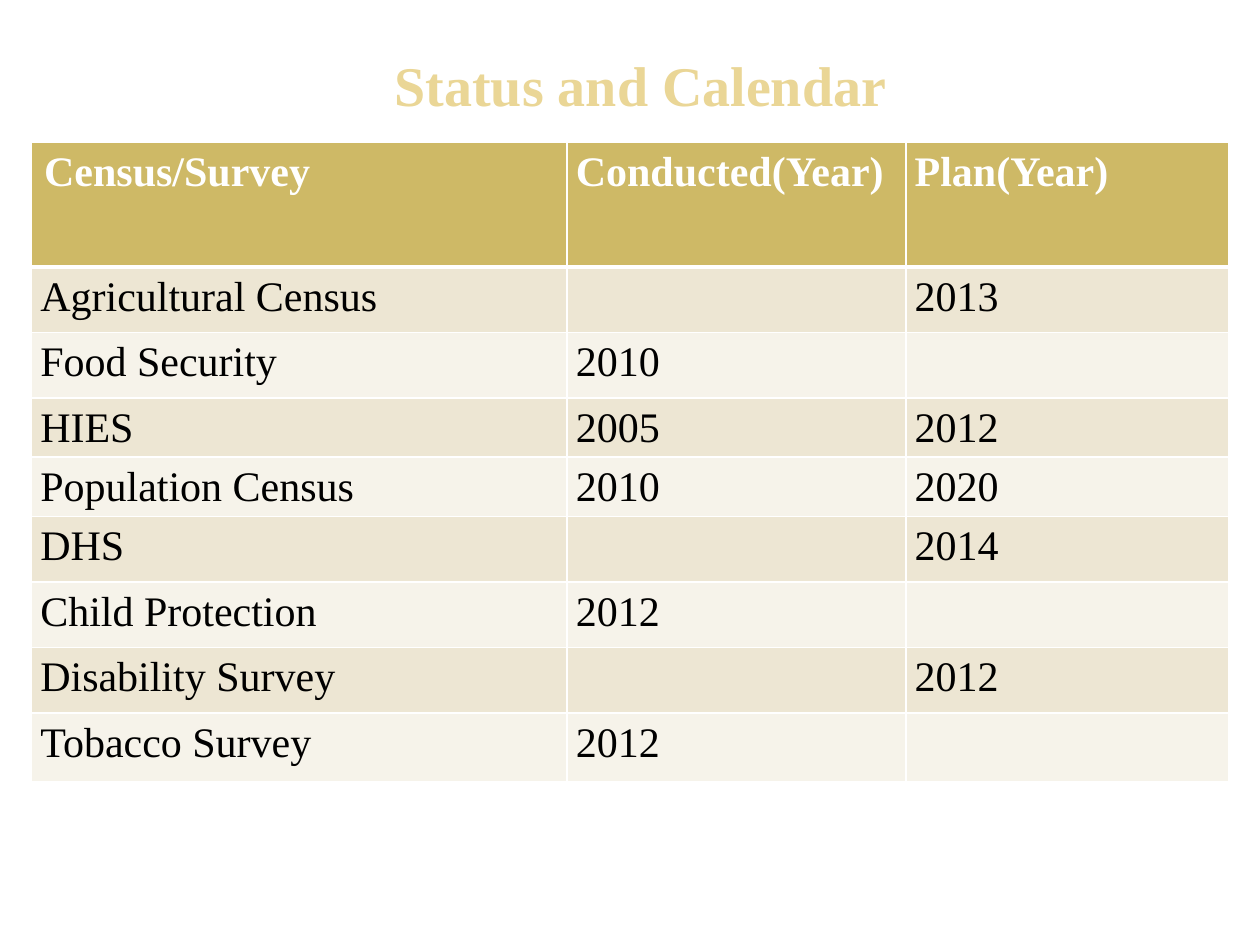
from dataclasses import dataclass

import lxml.etree
import pptx
import pptx.dml.color
import pptx.enum.text
import pptx.oxml.ns
import pptx.util

Inches = pptx.util.Inches
Pt = pptx.util.Pt


@dataclass(frozen=True)
class Theme:
    font: str = "Times New Roman"
    title: str = "EAD696"
    header: str = "CEB966"
    bands: tuple[str, str] = ("EDE6D3", "F6F3EA")
    light: str = "FFFFFF"
    dark: str = "000000"
    title_size: int = 32
    body_size: int = 24
    thin: int = 1
    thick: int = 3


@dataclass(frozen=True)
class Survey:
    name: str
    conducted: str
    plan: str
    height: float = 0.52


THEME = Theme()
HEADER = Survey("Census/Survey", "Conducted(Year)", "Plan(Year)", 0.99)
SURVEYS = [
    Survey("Agricultural Census", "", "2013"),
    Survey("Food Security", "2010", ""),
    Survey("HIES", "2005", "2012", 0.47),
    Survey("Population Census", "2010", "2020", 0.47),
    Survey("DHS", "", "2014"),
    Survey("Child Protection", "2012", ""),
    Survey("Disability Survey", "", "2012"),
    Survey("Tobacco Survey", "2012", "", 0.55),
]
COLUMN_WIDTHS = (4.25, 2.69, 2.56)


def rgb(color: str) -> pptx.dml.color.RGBColor:
    return pptx.dml.color.RGBColor.from_string(color)


def write(tf, text: str, *, size: int, color: str, bold: bool = False,
          align=None, spacing: float | None = None) -> None:
    p = tf.paragraphs[0]
    p.alignment = align
    p.line_spacing = spacing
    r = p.add_run()
    r.text = text
    r.font.name = THEME.font
    r.font.size = Pt(size)
    r.font.bold = bold
    r.font.color.rgb = rgb(color)


def set_borders(cell, *, top: int, bottom: int) -> None:
    """Border the cell in white; the sides are thin, widths are in points."""
    qn = pptx.oxml.ns.qn
    tc_pr = cell._tc.get_or_add_tcPr()
    widths = {"a:lnL": THEME.thin, "a:lnR": THEME.thin, "a:lnT": top, "a:lnB": bottom}
    for i, (tag, width) in enumerate(widths.items()):
        line = tc_pr.makeelement(qn(tag), {"w": str(Pt(width))})
        fill = lxml.etree.SubElement(line, qn("a:solidFill"))
        lxml.etree.SubElement(fill, qn("a:srgbClr"), val=THEME.light)
        tc_pr.insert(i, line)


def add_title(s, text: str) -> None:
    box = s.shapes.add_textbox(Inches(0.17), Inches(0.33), Inches(9.83), Inches(0.67))
    tf = box.text_frame
    tf.word_wrap = True
    tf.vertical_anchor = pptx.enum.text.MSO_ANCHOR.MIDDLE
    write(tf, text, size=THEME.title_size, color=THEME.title, bold=True,
          align=pptx.enum.text.PP_ALIGN.CENTER)


def fill_cell(cell, text: str, row: int, col: int) -> None:
    is_header = row == 0
    cell.fill.solid()
    cell.fill.fore_color.rgb = rgb(THEME.header if is_header else THEME.bands[(row - 1) % 2])
    set_borders(cell, top=THEME.thick if row == 1 else THEME.thin,
                bottom=THEME.thick if is_header else THEME.thin)
    if not text:
        return
    is_corner = is_header and col == 0
    if not is_corner:
        cell.margin_left = cell.margin_right = Inches(0.07)
        cell.margin_top = cell.margin_bottom = 0
    write(cell.text_frame, text, size=THEME.body_size, bold=is_header,
          color=THEME.light if is_header else THEME.dark,
          spacing=None if is_corner else 1.15)


def add_calendar(s, rows: list[Survey]) -> None:
    table = s.shapes.add_table(
        len(rows), len(COLUMN_WIDTHS), Inches(0.25), Inches(1.13),
        Inches(sum(COLUMN_WIDTHS)), Inches(sum(row.height for row in rows))).table
    for column, width in zip(table.columns, COLUMN_WIDTHS):
        column.width = Inches(width)
    for i, row in enumerate(rows):
        table.rows[i].height = Inches(row.height)
        for j, text in enumerate((row.name, row.conducted, row.plan)):
            fill_cell(table.cell(i, j), text, i, j)


def main() -> None:
    prs = pptx.Presentation()
    prs.slide_width, prs.slide_height = Inches(10), Inches(7.5)
    s = prs.slides.add_slide(prs.slide_layouts[6])
    add_title(s, "Status and Calendar")
    add_calendar(s, [HEADER, *SURVEYS])
    prs.save("out.pptx")


if __name__ == "__main__":
    main()
